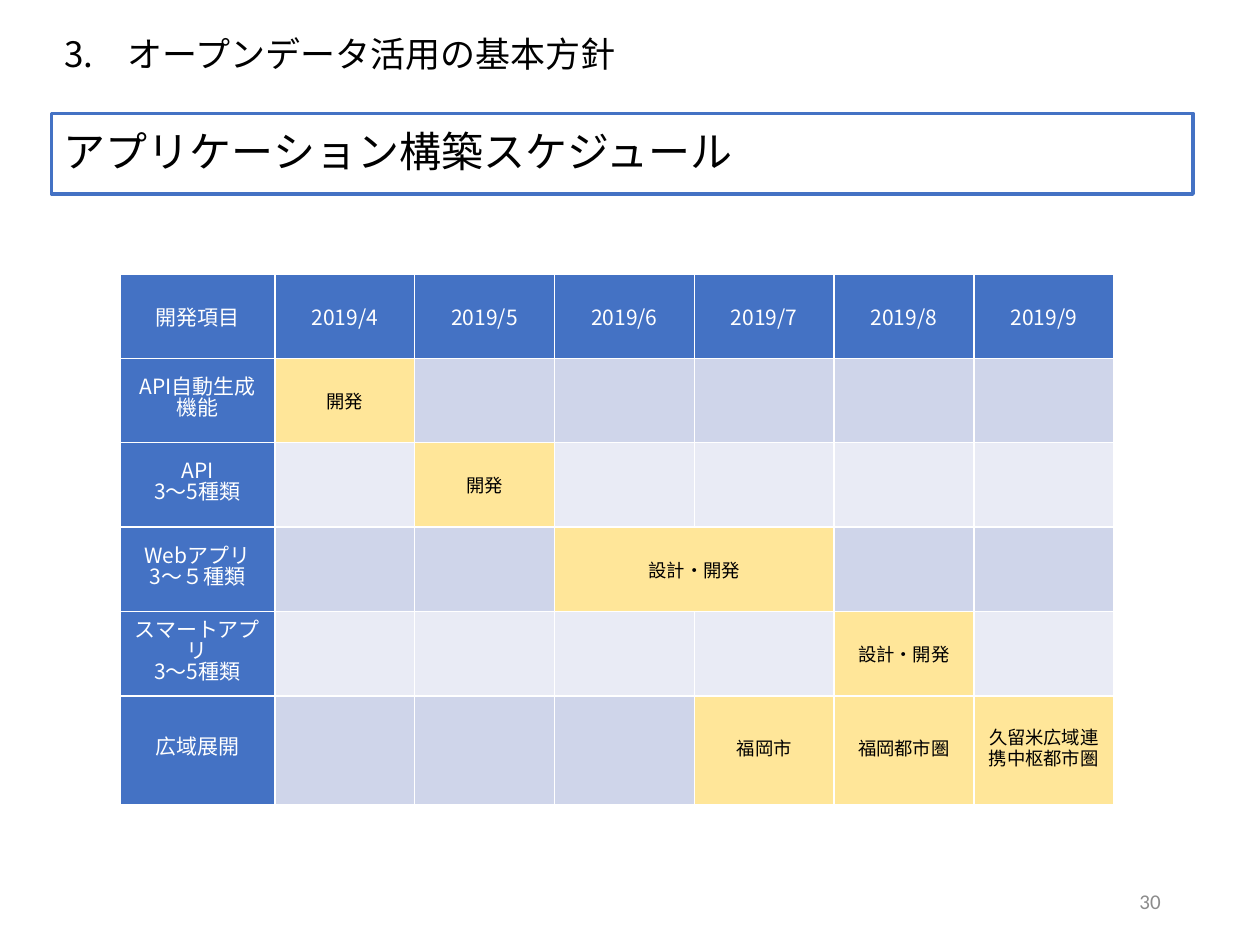
from lxml import etree
from pptx import Presentation
from pptx import util as u
from pptx.dml.color import RGBColor
from pptx.enum import shapes, text
from pptx.oxml.ns import qn

TITLE = "オープンデータ活用の基本方針"
TITLE_NUMBER = 3
HEADING = "アプリケーション構築スケジュール"
PAGE_NUMBER = "30"
HEADER = ["開発項目", "2019/4", "2019/5", "2019/6", "2019/7", "2019/8", "2019/9"]
# Each item: its label, then its tasks as (first month column, months, wording).
ITEMS = [
    ("API自動生成機能", [(1, 1, "開発")]),
    ("API\n3〜5種類", [(2, 1, "開発")]),
    ("Webアプリ\n3〜５種類", [(3, 2, "設計・開発")]),
    ("スマートアプリ\n3〜5種類", [(5, 1, "設計・開発")]),
    ("広域展開", [(4, 1, "福岡市"), (5, 1, "福岡都市圏"), (6, 1, "久留米広域連携中枢都市圏")]),
]

COLORS = {
    "blue": "4472C4", "task": "FFE699", "odd": "CFD5EA", "even": "E9EBF5",
    "black": "000000", "white": "FFFFFF", "gray": "8C8C8C",
}
FONT = "Noto Sans CJK JP"
LEFT, WIDTH = 29.5, 652.3
COLUMN_WIDTHS = [88.6] + [79.9] * 6
ROW_HEIGHTS = [48.25] * 5 + [61.9]


def color(name):
    return RGBColor.from_string(COLORS[name])


def write(frame, wording, size, ink, align, spacing=None, font=FONT):
    frame.text = wording
    frame.word_wrap = True
    frame.vertical_anchor = text.MSO_ANCHOR.MIDDLE
    for para in frame.paragraphs:
        para.alignment = align
        para.line_spacing = spacing
        for span in para.runs:
            span.font.size = u.Pt(size)
            span.font.bold = False
            span.font.name = font
            span.font.color.rgb = color(ink)
            east_asian = etree.SubElement(span.font._element, qn("a:ea"))
            east_asian.set("typeface", font)


def number_paragraph(para, start, indent):
    properties = para._p.get_or_add_pPr()
    properties.set("marL", str(u.Pt(indent)))
    properties.set("indent", str(u.Pt(-indent)))
    bullet = etree.SubElement(properties, qn("a:buAutoNum"))
    bullet.set("type", "arabicPeriod")
    bullet.set("startAt", str(start))


def fill_cell(cell, fill, wording="", size=12, ink="white", spacing=None):
    cell.fill.solid()
    cell.fill.fore_color.rgb = color(fill)
    if wording:
        write(cell.text_frame, wording, size, ink, text.PP_ALIGN.CENTER, spacing)
        cell.vertical_anchor = text.MSO_ANCHOR.MIDDLE


def add_schedule(page):
    table = page.shapes.add_table(
        len(ITEMS) + 1, len(HEADER), u.Pt(68.5), u.Pt(156.5),
        u.Pt(sum(COLUMN_WIDTHS)), u.Pt(sum(ROW_HEIGHTS))).table
    for column, width in zip(table.columns, COLUMN_WIDTHS):
        column.width = u.Pt(width)
    for row, height in zip(table.rows, ROW_HEIGHTS):
        row.height = u.Pt(height)
    for column, month in enumerate(HEADER):
        fill_cell(table.cell(0, column), "blue", month)
    for row, (label, tasks) in enumerate(ITEMS, start=1):
        fill_cell(table.cell(row, 0), "blue", label, spacing=u.Pt(12))
        for column in range(1, len(HEADER)):
            fill_cell(table.cell(row, column), "odd" if row % 2 else "even")
        spacing = u.Pt(12) if row == len(ITEMS) else None
        for first, months, wording in tasks:
            cell = table.cell(row, first)
            if months > 1:
                cell.merge(table.cell(row, first + months - 1))
            fill_cell(cell, "task", wording, 10.5, "black", spacing)


def main():
    deck = Presentation()
    deck.slide_width, deck.slide_height = u.Pt(720), u.Pt(540)
    page = deck.slides.add_slide(deck.slide_layouts[5])

    title = page.shapes.title
    title.left, title.top = u.Pt(LEFT), u.Pt(8.6)
    title.width, title.height = u.Pt(WIDTH), u.Pt(46.8)
    write(title.text_frame, TITLE, 20, "black", text.PP_ALIGN.LEFT, 0.9)
    number_paragraph(title.text_frame.paragraphs[0], TITLE_NUMBER, 36)

    heading = page.shapes.add_shape(
        shapes.MSO_SHAPE.RECTANGLE, u.Pt(LEFT), u.Pt(64.8), u.Pt(WIDTH), u.Pt(46.1))
    heading.shadow.inherit = False
    heading.fill.background()
    heading.line.color.rgb = color("blue")
    heading.line.width = u.Pt(2)
    write(heading.text_frame, HEADING, 24, "black", text.PP_ALIGN.LEFT, 0.9)

    add_schedule(page)

    number = page.shapes.add_textbox(u.Pt(508.3), u.Pt(500.4), u.Pt(162), u.Pt(28.8))
    write(number.text_frame, PAGE_NUMBER, 12, "gray", text.PP_ALIGN.RIGHT, font="Calibri")

    deck.save("out.pptx")


if __name__ == "__main__":
    main()
